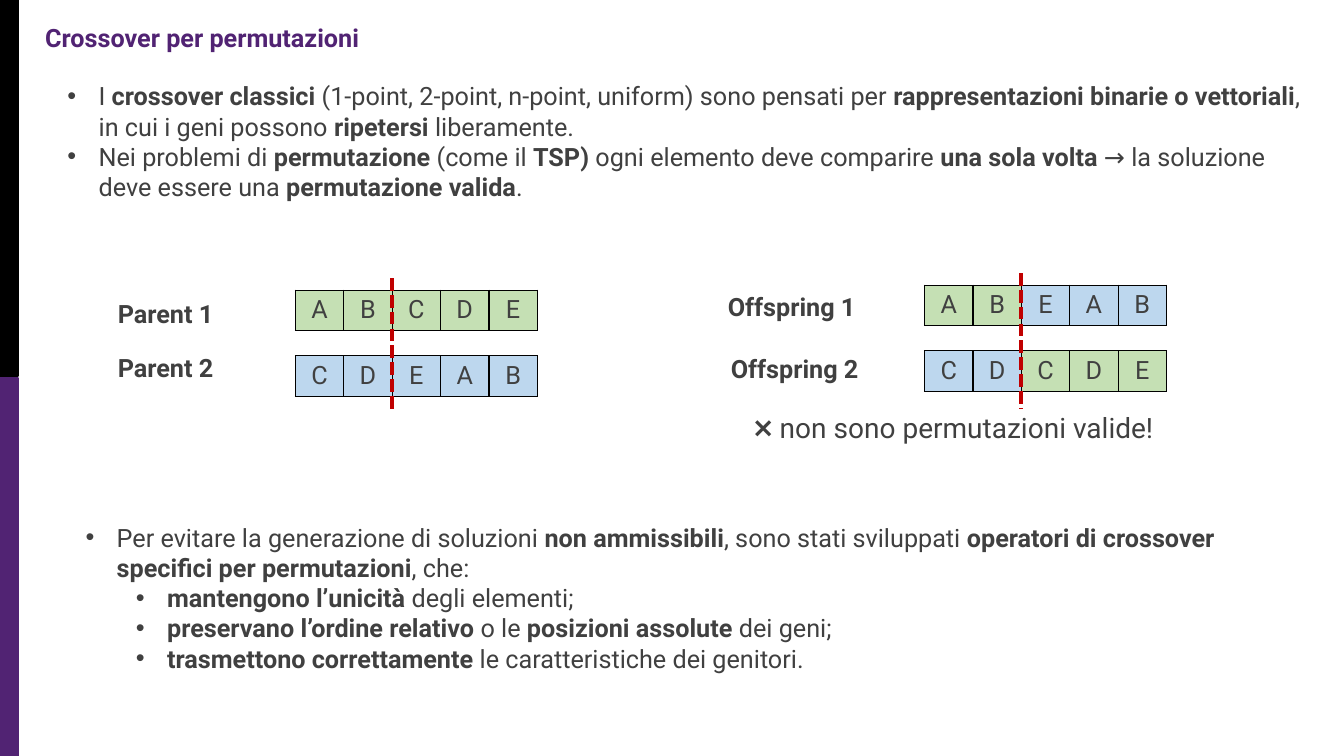
"""Build the slide on crossover for permutations."""
import pptx
import pptx.dml.color
import pptx.enum.dml
import pptx.enum.shapes
import pptx.enum.text
import pptx.oxml.ns
import pptx.util
from lxml import etree

RGBColor = pptx.dml.color.RGBColor
PURPLE = RGBColor(0x51, 0x23, 0x73)
BLACK = RGBColor(0, 0, 0)
GREY = RGBColor(0x40, 0x40, 0x40)
GREEN = RGBColor(0xC5, 0xE0, 0xB4)
BLUE = RGBColor(0xBD, 0xD7, 0xEE)
RED = RGBColor(0xC0, 0, 0)
PX = 9144
CELL = 48
ROW_H = 40
qn = pptx.oxml.ns.qn


def write(p, text, size=18, color=GREY):
    """Fill a paragraph, with bold text between double asterisks."""
    for i, part in enumerate(text.split("**")):
        if part:
            r = p.add_run()
            r.text = part
            r.font.name = "Roboto"
            r.font.size = pptx.util.Pt(size)
            r.font.bold = i % 2 == 1
            r.font.color.rgb = color


def add_text(box, items, size=18, color=GREY):
    """Add a text box of (text, indent) items, bulleted where indent is set."""
    tf = s.shapes.add_textbox(*[v * PX for v in box]).text_frame
    tf.word_wrap = True
    tf.auto_size = pptx.enum.text.MSO_AUTO_SIZE.SHAPE_TO_FIT_TEXT
    for i, (text, indent) in enumerate(items):
        p = tf.add_paragraph() if i else tf.paragraphs[0]
        write(p, text, size, color)
        if indent:
            p.level = int(indent > 31)
            pPr = p._p.get_or_add_pPr()
            pPr.set("marL", str(indent * PX))
            pPr.set("indent", str(-31 * PX))
            etree.SubElement(pPr, qn("a:buFont")).set("typeface", "Arial")
            etree.SubElement(pPr, qn("a:buChar")).set("char", "•")


prs = pptx.Presentation()
prs.slide_width, prs.slide_height = 1333 * PX, 750 * PX
s = prs.slides.add_slide(prs.slide_layouts[6])

for top, height, color in [(375, 377, PURPLE), (0, 373, BLACK)]:
    bar = s.shapes.add_shape(pptx.enum.shapes.MSO_SHAPE.RECTANGLE,
                             0, top * PX, 18 * PX, height * PX)
    bar.shadow.inherit = False
    bar.fill.solid()
    bar.fill.fore_color.rgb = color
    bar.line.color.rgb = color
    bar.line.width = pptx.util.Pt(1.5)

add_text((35, 17, 866, 40), [("**Crossover per permutazioni**", 0)], color=PURPLE)
add_text((57, 75, 1252, 131), [
    ("I **crossover classici** (1-point, 2-point, n-point, uniform) sono pensati per "
     "**rappresentazioni binarie o vettoriali**, in cui i geni possono **ripetersi** "
     "liberamente.", 31),
    ("Nei problemi di **permutazione** (come il **TSP) **ogni elemento deve comparire "
     "**una sola volta** → la soluzione deve essere una **permutazione valida**.", 31),
])
add_text((738, 402, 454, 44), [("❌ non sono permutazioni valide!", 0)], size=20)

chromosomes = [
    ("Parent 1", 107, 291, 293, 288, "ABCDE", GREEN, GREEN),
    ("Parent 2", 107, 345, 293, 353, "CDEAB", BLUE, BLUE),
    ("Offspring 1", 712, 284, 917, 283, "ABEAB", GREEN, BLUE),
    ("Offspring 2", 715, 346, 917, 348, "CDCDE", BLUE, GREEN),
]
for label, label_x, label_y, x, y, genes, head, tail in chromosomes:
    add_text((label_x, label_y, 166, 40), [(f"**{label}**", 0)])
    table = s.shapes.add_table(1, len(genes), x * PX, y * PX,
                               CELL * len(genes) * PX, ROW_H * PX).table
    table.rows[0].height = ROW_H * PX
    for i, gene in enumerate(genes):
        table.columns[i].width = CELL * PX
        cell = table.cell(0, i)
        tcPr = cell._tc.get_or_add_tcPr()
        for side in ("a:lnL", "a:lnR", "a:lnT", "a:lnB"):
            ln = etree.SubElement(tcPr, qn(side), w="12700")
            fill = etree.SubElement(ln, qn("a:solidFill"))
            etree.SubElement(fill, qn("a:srgbClr")).set("val", str(BLACK))
        cell.fill.solid()
        cell.fill.fore_color.rgb = head if i < 2 else tail
        p = cell.text_frame.paragraphs[0]
        p.alignment = pptx.enum.text.PP_ALIGN.CENTER
        write(p, gene)

for x, top, bottom in [(389, 276, 409), (1013, 271, 405)]:
    cut = s.shapes.add_connector(pptx.enum.shapes.MSO_CONNECTOR.STRAIGHT,
                                 x * PX, top * PX, x * PX, bottom * PX)
    cut.line.color.rgb = RED
    cut.line.width = pptx.util.Pt(3)
    cut.line.dash_style = pptx.enum.dml.MSO_LINE.SQUARE_DOT
    etree.SubElement(cut._element.spPr, qn("a:effectLst"))

add_text((75, 513, 1184, 162), [
    ("Per evitare la generazione di soluzioni **non ammissibili**, sono stati sviluppati "
     "**operatori di crossover specifici per permutazioni**, che:", 31),
    ("**mantengono l’unicità** degli elementi;", 81),
    ("**preservano l’ordine relativo** o le **posizioni assolute** dei geni;", 81),
    ("**trasmettono correttamente** le caratteristiche dei genitori.", 81),
])

prs.save("out.pptx")
